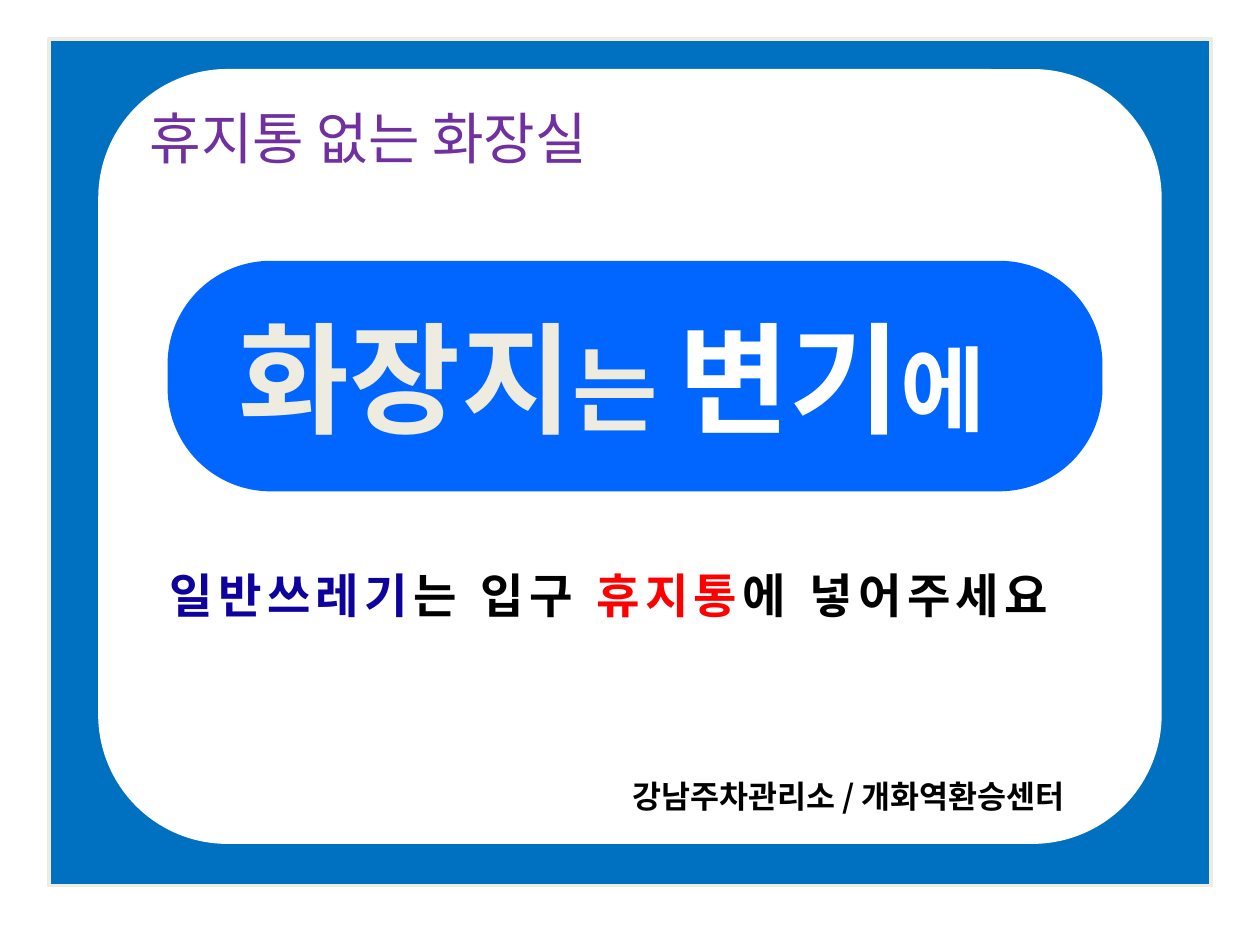
from pptx import Presentation
from pptx.dml.color import RGBColor
from pptx.enum.shapes import MSO_SHAPE
from pptx.enum.text import MSO_ANCHOR, MSO_AUTO_SIZE
from pptx.oxml.ns import qn
from pptx.util import Inches, Pt
from lxml.etree import SubElement

W, H = Inches(10), Inches(7.5)
WHITE = RGBColor(0xFF, 0xFF, 0xFF)
BLACK = RGBColor(0x00, 0x00, 0x00)
CREAM = RGBColor(0xEE, 0xEC, 0xE1)
FRAME_BLUE = RGBColor(0x00, 0x70, 0xC0)
BANNER_BLUE = RGBColor(0x00, 0x66, 0xFF)
PURPLE = RGBColor(0x70, 0x30, 0xA0)
NAVY = RGBColor(0x0D, 0x02, 0x9E)
RED = RGBColor(0xFF, 0x00, 0x00)
NOTO = "Noto Sans CJK KR"


def share(box, x, y, w, h):
    """Return the part of a box given as shares of its width and height."""
    left, top, width, height = box
    return (round(left + x * width), round(top + y * height),
            round(w * width), round(h * height))


def add_panel(s, box, shape, fill, line=None, adj=None):
    """Add a flat filled shape with an optional outline."""
    sp = s.shapes.add_shape(shape, *box)
    sp.shadow.inherit = False
    sp.fill.solid()
    sp.fill.fore_color.rgb = fill
    if line is None:
        sp.line.fill.background()
    else:
        sp.line.color.rgb = line
        sp.line.width = Pt(2)
    if adj is not None:
        sp.adjustments[0] = adj


def add_text(s, box, runs, font=NOTO, bold=True, spacing=None, tracking=None):
    """Add one line of text from (text, size, colour) runs."""
    tf = s.shapes.add_textbox(*box).text_frame
    tf.word_wrap = True
    tf.auto_size = MSO_AUTO_SIZE.NONE
    tf.vertical_anchor = MSO_ANCHOR.TOP
    p = tf.paragraphs[0]
    if spacing:
        p.line_spacing = spacing
    for text, size, color in runs:
        r = p.add_run()
        r.text = text
        r.font.size = Pt(size)
        r.font.bold = bold
        r.font.name = font
        r.font.color.rgb = color
        rPr = r.font._element
        SubElement(rPr, qn("a:ea")).set("typeface", font)
        if tracking:
            rPr.set("spc", str(tracking * 100))


def add_frame(s, box):
    """Draw the blue frame and the rounded white card inside it."""
    add_panel(s, share(box, 0.039, 0.041, 0.922, 0.896),
              MSO_SHAPE.RECTANGLE, FRAME_BLUE, CREAM)
    add_panel(s, share(box, 0.078, 0.073, 0.844, 0.82),
              MSO_SHAPE.ROUNDED_RECTANGLE, WHITE)


def add_banner(s, box):
    """Draw the main message on its blue pill."""
    add_panel(s, box, MSO_SHAPE.ROUNDED_RECTANGLE, BANNER_BLUE, adj=0.448)
    add_text(s, share(box, 0.063, 0.158, 0.895, 0.84),
             [("화장지", 69, CREAM), ("는 ", 53, CREAM),
              ("변기", 69, WHITE), ("에", 53, WHITE)])


def add_title(s, box):
    """Write the purple heading."""
    add_text(s, box, [("휴지통 없는 화장실", 32, PURPLE)], bold=False)


def add_request(s, box):
    """Write the widely tracked request below the banner."""
    add_text(s, box,
             [("일반쓰레기", 27, NAVY), ("는 입구 ", 27, BLACK),
              ("휴지통", 27, RED), ("에 넣어주세요", 27, BLACK)],
             font="Arial", spacing=1.5, tracking=3)


def add_signature(s, box):
    """Write the names of the offices in charge."""
    add_text(s, box, [("강남주차관리소 / 개화역환승센터", 18, BLACK)])


def main():
    """Build the notice and save it."""
    prs = Presentation()
    prs.slide_width, prs.slide_height = W, H
    s = prs.slides.add_slide(prs.slide_layouts[6])
    page = (0, 0, W, H)
    add_frame(s, page)
    add_banner(s, share(page, 0.133, 0.276, 0.742, 0.244))
    add_title(s, share(page, 0.109, 0.103, 0.406, 0.085))
    add_request(s, share(page, 0.125, 0.563, 0.781, 0.092))
    add_signature(s, share(page, 0.492, 0.816, 0.406, 0.053))
    prs.save("out.pptx")


if __name__ == "__main__":
    main()
